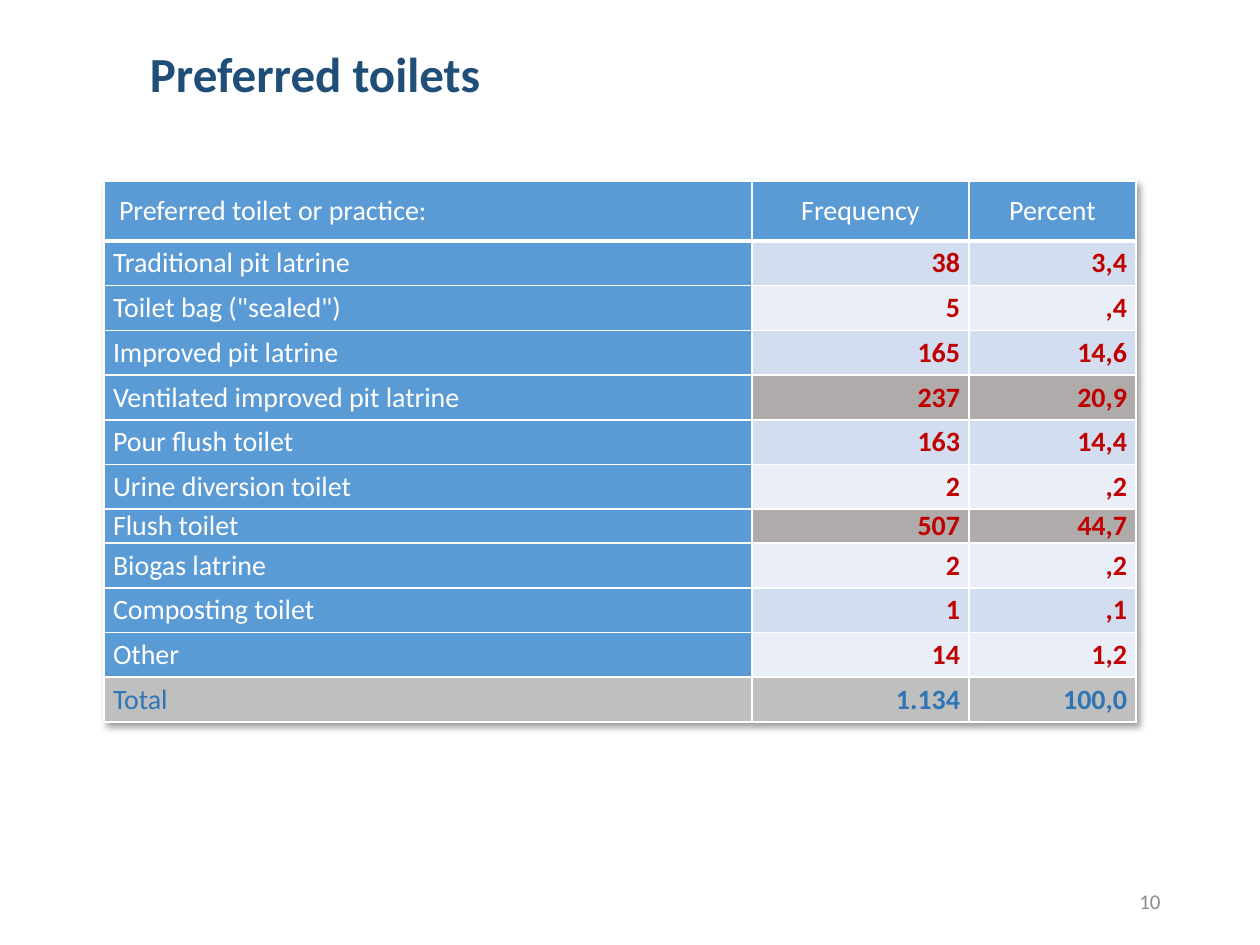
import pptx
import pptx.dml.color
import pptx.enum.text
import pptx.oxml
import pptx.oxml.ns
import pptx.util

# Content
TITLE = "Preferred toilets"
PAGE_NUMBER = "10"
HEADINGS = ("Preferred toilet or practice:", "Frequency", "Percent")
PREFERENCES = [
    ("Traditional pit latrine", "38", "3,4"),
    ('Toilet bag ("sealed")', "5", ",4"),
    ("Improved pit latrine", "165", "14,6"),
    ("Ventilated improved pit latrine", "237", "20,9"),
    ("Pour flush toilet", "163", "14,4"),
    ("Urine diversion toilet", "2", ",2"),
    ("Flush toilet", "507", "44,7"),
    ("Biogas latrine", "2", ",2"),
    ("Composting toilet", "1", ",1"),
    ("Other", "14", "1,2"),
]
TOTAL = ("Total", "1.134", "100,0")
HIGHLIGHTED = {"Ventilated improved pit latrine", "Flush toilet"}
COMPACT = "Flush toilet"

THEME = {
    "font": "Calibri",
    "title": "1F4E79", "page": "8C8C8C", "white": "FFFFFF",
    "label_fill": "5B9BD5", "bands": ("D2DEEF", "EAEFF7"),
    "highlight": "AFABAB", "value": "C00000",
    "total": "2E75B6", "total_fill": "BFBFBF",
    "title_size": 28, "table_size": 16, "page_size": 12,
}

# Layout in px, 126 to the inch
PX = 914400 / 126
TITLE_BOX = (103, 32, 1134, 90)
TITLE_INDENT = 47
PAGE_BOX = (890, 876, 283, 50)
TABLE_LEFT, TABLE_TOP, TABLE_HEIGHT = 104, 181, 541
COLUMN_WIDTHS = (648, 217, 167)
HEADER_HEIGHT, COMPACT_HEIGHT = 60, 34
CELL_INSET, HEADING_INSET = 9, 15

ALIGN = pptx.enum.text.PP_ALIGN
MIDDLE = pptx.enum.text.MSO_ANCHOR.MIDDLE


def px(length):
    return pptx.util.Emu(round(length * PX))


def rgb(color):
    return pptx.dml.color.RGBColor.from_string(color)


def write(paragraph, text, size, color, bold=False, align=ALIGN.LEFT):
    paragraph.alignment = align
    run = paragraph.add_run()
    run.text = text
    run.font.name = THEME["font"]
    run.font.size = pptx.util.Pt(size)
    run.font.bold = bold
    run.font.color.rgb = rgb(color)


def set_borders(cell, bottom=1):
    properties = cell._tc.get_or_add_tcPr()
    widths = {"lnL": 1, "lnR": 1, "lnT": 1, "lnB": bottom}
    for position, (side, points) in enumerate(widths.items()):
        properties.insert(position, pptx.oxml.parse_xml(
            f'<a:{side} {pptx.oxml.ns.nsdecls("a")} w="{points * 12700}"><a:solidFill>'
            f'<a:srgbClr val="{THEME["white"]}"/></a:solidFill></a:{side}>'))


def fill_cell(cell, text, fill, color, bold, align, inset=CELL_INSET, bottom=1):
    cell.fill.solid()
    cell.fill.fore_color.rgb = rgb(fill)
    cell.vertical_anchor = MIDDLE
    cell.margin_left, cell.margin_right = px(inset), px(CELL_INSET)
    cell.margin_top = cell.margin_bottom = 0
    write(cell.text_frame.paragraphs[0], text, THEME["table_size"], color, bold, align)
    set_borders(cell, bottom)


def add_title(slide):
    title = slide.shapes.title
    title.left, title.top, title.width, title.height = map(px, TITLE_BOX)
    frame = title.text_frame
    frame.auto_size = pptx.enum.text.MSO_AUTO_SIZE.NONE
    frame.vertical_anchor = MIDDLE
    frame.margin_left = px(TITLE_INDENT)
    frame.paragraphs[0].line_spacing = 0.9
    write(frame.paragraphs[0], TITLE, THEME["title_size"], THEME["title"], True)


def add_page_number(slide):
    frame = slide.shapes.add_textbox(*map(px, PAGE_BOX)).text_frame
    frame.word_wrap = True
    frame.vertical_anchor = MIDDLE
    write(frame.paragraphs[0], PAGE_NUMBER, THEME["page_size"], THEME["page"],
          align=ALIGN.RIGHT)


def add_shadow(table):
    table._tbl.tblPr.insert(0, pptx.oxml.parse_xml(
        f'<a:effectLst {pptx.oxml.ns.nsdecls("a")}>'
        '<a:outerShdw blurRad="50800" dist="38100" dir="2700000" algn="tl" rotWithShape="0">'
        '<a:srgbClr val="000000"><a:alpha val="40000"/></a:srgbClr>'
        '</a:outerShdw></a:effectLst>'))


def add_preferences(slide):
    rows = [HEADINGS, *PREFERENCES, TOTAL]
    table = slide.shapes.add_table(
        len(rows), len(HEADINGS), px(TABLE_LEFT), px(TABLE_TOP),
        px(sum(COLUMN_WIDTHS)), px(TABLE_HEIGHT)).table
    add_shadow(table)
    for column, width in zip(table.columns, COLUMN_WIDTHS):
        column.width = px(width)

    # Rows other than the header and the compact one share the rest equally
    row_height = (TABLE_HEIGHT - HEADER_HEIGHT - COMPACT_HEIGHT) / (len(rows) - 2)
    for row in table.rows:
        row.height = px(row_height)
    table.rows[0].height = px(HEADER_HEIGHT)

    # Header
    for column, heading in enumerate(HEADINGS):
        first = column == 0
        fill_cell(table.cell(0, column), heading, THEME["label_fill"], THEME["white"],
                  False, ALIGN.LEFT if first else ALIGN.CENTER,
                  HEADING_INSET if first else CELL_INSET, bottom=3)

    # Preferences and total
    for index, (label, *values) in enumerate(rows[1:], start=1):
        label_fill, label_color = THEME["label_fill"], THEME["white"]
        value_fill, value_color = THEME["bands"][(index - 1) % 2], THEME["value"]
        if label in HIGHLIGHTED:
            value_fill = THEME["highlight"]
        if label == COMPACT:
            table.rows[index].height = px(COMPACT_HEIGHT)
        if label == TOTAL[0]:
            label_fill = value_fill = THEME["total_fill"]
            label_color = value_color = THEME["total"]
        fill_cell(table.cell(index, 0), label, label_fill, label_color, False, ALIGN.LEFT)
        for column, value in enumerate(values, start=1):
            fill_cell(table.cell(index, column), value, value_fill, value_color,
                      True, ALIGN.RIGHT)


def main():
    deck = pptx.Presentation()
    deck.slide_width, deck.slide_height = px(1260), px(945)
    slide = deck.slides.add_slide(deck.slide_layouts.get_by_name("Title Only"))
    add_title(slide)
    add_page_number(slide)
    add_preferences(slide)
    deck.save("out.pptx")


if __name__ == "__main__":
    main()
